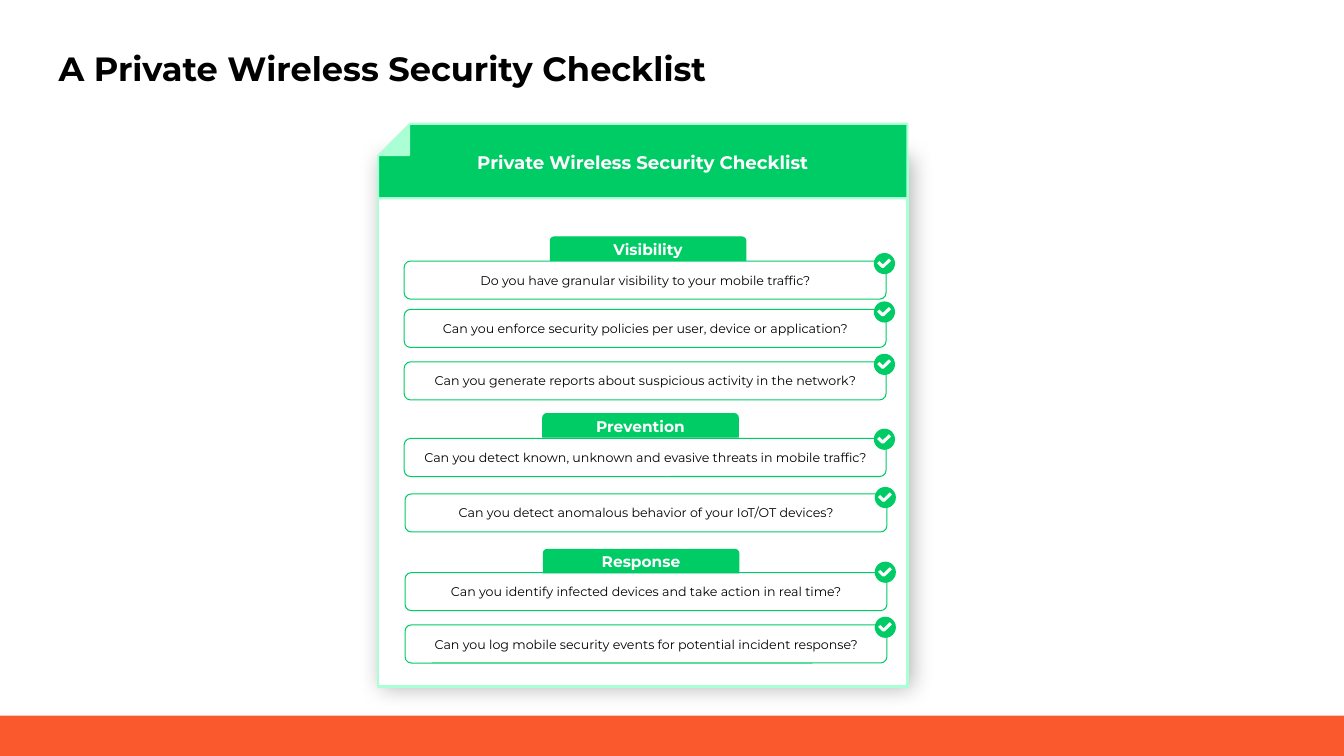
from lxml import etree
from pptx import Presentation
from pptx import util as u
from pptx.dml.color import RGBColor
from pptx.enum import shapes, text
from pptx.oxml import ns

GREEN = RGBColor(0x00, 0xCC, 0x66)
MINT = RGBColor(0xAB, 0xFF, 0xD5)
ORANGE = RGBColor(0xFA, 0x58, 0x2D)
WHITE = RGBColor(0xFF, 0xFF, 0xFF)
BLACK = RGBColor(0x00, 0x00, 0x00)

KIND = shapes.MSO_SHAPE
MID = text.MSO_ANCHOR.MIDDLE
TOP = text.MSO_ANCHOR.TOP
LEFT = text.PP_ALIGN.LEFT
MAIN = text.PP_ALIGN.CENTER

GROUPS = [
    ("Visibility", 393.1, 169.2, [
        ("Do you have granular visibility to your mobile traffic?", 288.7, 186.5, 180.7),
        ("Can you enforce security policies per user, device or application?", 288.7, 221, 215.3),
        ("Can you generate reports about suspicious activity in the network?", 288.7, 258.5, 252.7),
    ]),
    ("Prevention", 387.7, 295.4, [
        ("Can you detect known, unknown and evasive threats in mobile traffic?", 288.7, 313.2, 306.2),
        ("Can you detect anomalous behavior of your IoT/OT devices?", 289.3, 352.8, 347.8),
    ]),
    ("Response", 388.1, 392.4, [
        ("Can you identify infected devices and take action in real time?", 289.3, 409, 401.2),
        ("Can you log mobile security events for potential incident response?", 289.3, 446.4, 440.5),
    ]),
]


class Deck:
    font = "Montserrat"
    pad = 9.4

    def __init__(self):
        self.prs = Presentation()
        self.prs.slide_width = u.Pt(960)
        self.prs.slide_height = u.Pt(540)
        self.slide = self.prs.slides.add_slide(self.prs.slide_layouts[5])

    def apply(self, item, style):
        for key, value in style.items():
            setattr(item, key, value)

    def letter(self, shape, words, size, color, bold=False, side=None, align=MAIN, anchor=MID):
        side = u.Pt(self.pad if side is None else side)
        frame = shape.text_frame
        frame.text = words
        self.apply(frame, {
            "word_wrap": True, "vertical_anchor": anchor,
            "auto_size": text.MSO_AUTO_SIZE.NONE,
            "margin_left": side, "margin_right": side,
            "margin_top": u.Pt(self.pad), "margin_bottom": u.Pt(self.pad),
        })
        para = frame.paragraphs[0]
        para.alignment = align
        font = para.runs[0].font
        self.apply(font, {"name": self.font, "size": u.Pt(size), "bold": bold})
        font.color.rgb = color

    def title(self, words, *box):
        head = self.slide.shapes.title
        self.apply(head, dict(zip(("left", "top", "width", "height"), map(u.Pt, box))))
        self.letter(head, words, 24, BLACK, True, align=LEFT, anchor=TOP)

    def shape(self, kind, box, fill, line=None, width=0.75, turn=0, bends=()):
        item = self.slide.shapes.add_shape(kind, *map(u.Pt, box))
        item.shadow.inherit = False
        item.rotation = turn
        item.fill.solid()
        item.fill.fore_color.rgb = fill
        for num, bend in enumerate(bends):
            item.adjustments[num] = bend
        if line is None:
            item.line.fill.background()
        else:
            item.line.color.rgb = line
            item.line.width = u.Pt(width)
        return item

    def shade(self, item):
        glow = item._element.spPr.find(ns.qn("a:effectLst"))
        outer = etree.SubElement(glow, ns.qn("a:outerShdw"), {
            "blurRad": str(u.Pt(15.8)), "dist": str(u.Pt(2.2)),
            "dir": "0", "algn": "ctr", "rotWithShape": "0",
        })
        tint = etree.SubElement(outer, ns.qn("a:srgbClr"), val=str(BLACK))
        etree.SubElement(tint, ns.qn("a:alpha"), val="30000")

    def label(self, words, *box):
        item = self.slide.shapes.add_textbox(*map(u.Pt, box))
        self.letter(item, words, 13, WHITE, True, anchor=TOP)

    def tab(self, words, x, y):
        item = self.shape(KIND.ROUND_2_SAME_RECTANGLE, (x, y, 139.7, 16.8),
                          GREEN, GREEN, bends=(0.167, 0))
        self.letter(item, words, 11, WHITE, True)

    def row(self, words, x, y):
        item = self.shape(KIND.ROUNDED_RECTANGLE, (x, y, 344.2, 27.2),
                          WHITE, GREEN, bends=(0.167,))
        self.letter(item, words, 9, BLACK, side=0)

    def check(self, x, y):
        self.shape(KIND.OVAL, (x, y, 15.1, 15.1), GREEN)
        pen = self.slide.shapes.build_freeform(u.Pt(x + 3.2), u.Pt(y + 6.6))
        pen.add_line_segments([(u.Pt(x + 6.4), u.Pt(y + 9.8)),
                               (u.Pt(x + 11.6), u.Pt(y + 4.8))], close=False)
        tick = pen.convert_to_shape()
        tick.shadow.inherit = False
        tick.fill.background()
        tick.line.color.rgb = WHITE
        tick.line.width = u.Pt(2.25)


def main():
    deck = Deck()
    deck.shape(KIND.RECTANGLE, (0, 511.2, 960, 28.8), ORANGE)
    deck.title("A Private Wireless Security Checklist", 32.4, 24.5, 894.2, 59.8)
    page = deck.shape(KIND.RECTANGLE, (270.2, 112.4, 378, 378), WHITE, MINT, 1.5, 180)
    deck.shade(page)
    for name, x, y, rows in GROUPS:
        for words, left, top, mark in rows:
            deck.row(words, left, top)
            deck.check(left + 335.5, mark)
        deck.tab(name, x, y)
    deck.shape(KIND.SNIP_1_RECTANGLE, (432.5, -74, 53.2, 378),
               GREEN, MINT, 1.5, 270, (0.431,))
    deck.shape(KIND.RIGHT_TRIANGLE, (271.2, 89.8, 21, 21), MINT, MINT, 1.5, 270)
    deck.label("Private Wireless Security Checklist", 301.7, 98.6, 314.6, 35.3)
    deck.prs.save("out.pptx")


if __name__ == "__main__":
    main()
